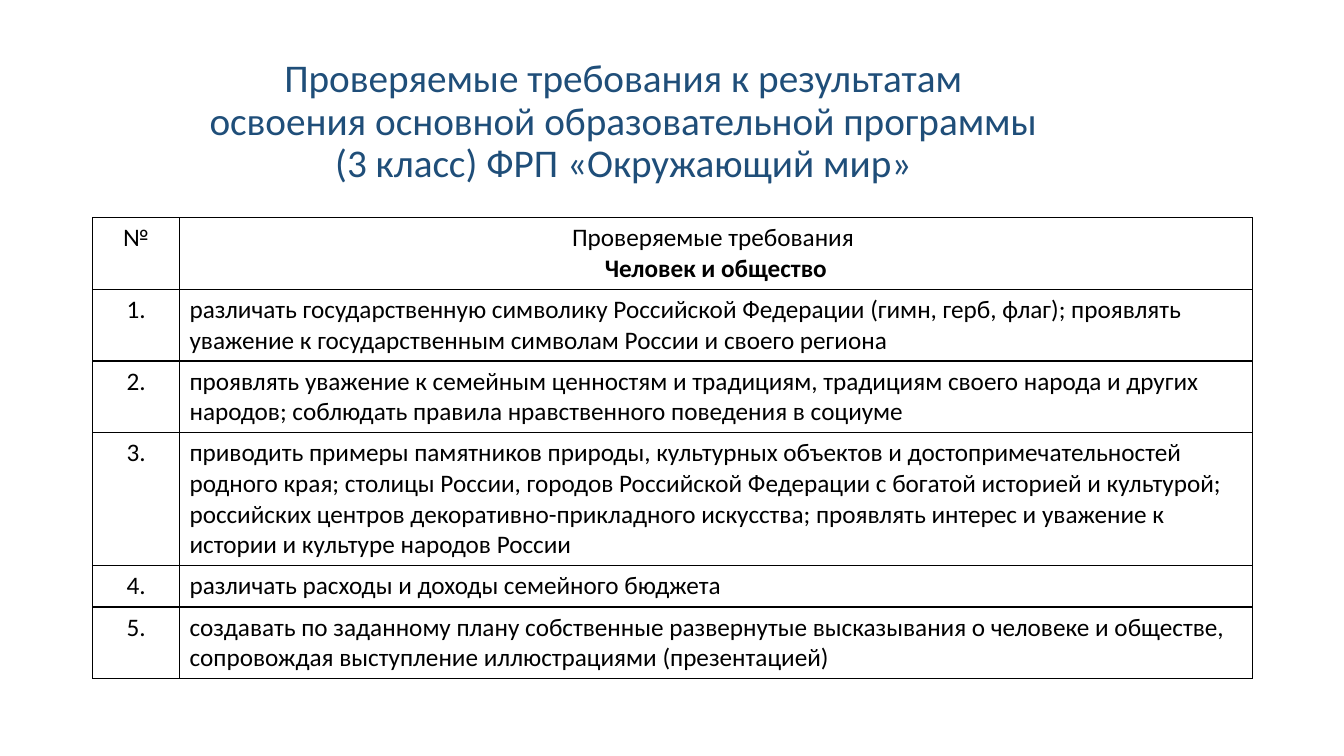
"""Build a slide with a title and a table of tested requirements."""
from typing import Any, NamedTuple

from lxml import etree
from pptx import Presentation
from pptx.dml.color import RGBColor
from pptx.enum.text import MSO_ANCHOR, MSO_AUTO_SIZE, PP_ALIGN
from pptx.oxml.ns import qn
from pptx.util import Pt

BLUE = RGBColor(0x1F, 0x4E, 0x79)
BLACK = RGBColor(0, 0, 0)
LEFT, CENTER = PP_ALIGN.LEFT, PP_ALIGN.CENTER
MIDDLE = MSO_ANCHOR.MIDDLE
FIXED = MSO_AUTO_SIZE.NONE
SCALE = 9144
SIDES = ("a:lnL", "a:lnR", "a:lnT", "a:lnB")
HEAD = {"name": "Calibri", "size": Pt(28), "bold": False}
BODY = {"name": "Calibri", "size": Pt(18), "bold": False}
TITLE = (
    "Проверяемые требования к результатам \v"
    "освоения основной образовательной программы \v"
    "(3 класс) ФРП «Окружающий мир» "
)


class Row(NamedTuple):
    """One table row with its height in px."""
    label: str
    text: str
    high: int
    align: Any = LEFT


ROWS = [
    Row("№", "Проверяемые требования \nЧеловек и общество", 71, CENTER),
    Row("1.", "различать государственную символику Российской Федерации "
        "(гимн, герб, флаг); проявлять уважение к государственным символам "
        "России и своего региона", 71),
    Row("2.", "проявлять уважение к семейным ценностям и традициям, традициям "
        "своего народа и других народов; соблюдать правила нравственного "
        "поведения в социуме", 71),
    Row("3.", "приводить примеры памятников природы, культурных объектов и "
        "достопримечательностей родного края; столицы России, городов "
        "Российской Федерации с богатой историей и культурой; российских "
        "центров декоративно-прикладного искусства; проявлять интерес и "
        "уважение к истории и культуре народов России", 132),
    Row("4.", "различать расходы и доходы семейного бюджета", 41),
    Row("5.", "создавать по заданному плану собственные развернутые "
        "высказывания о человеке и обществе, сопровождая выступление "
        "иллюстрациями (презентацией)", 71),
]
COLS = (86, 1064)


def px(size: int) -> int:
    """Turn px into EMU."""
    return size * SCALE


def style(frame: Any, form: dict[str, Any], color: RGBColor, align: Any) -> None:
    """Format all text in a frame."""
    for para in frame.paragraphs:
        para.alignment = align
        for run in para.runs:
            for key, value in form.items():
                setattr(run.font, key, value)
            run.font.color.rgb = color


def border(cell: Any) -> None:
    """Draw a thin black line on each side of a cell."""
    props = cell._tc.get_or_add_tcPr()
    for place, side in enumerate(SIDES):
        line = etree.Element(qn(side), w=str(Pt(1)))
        fill = etree.SubElement(line, qn("a:solidFill"))
        etree.SubElement(fill, qn("a:srgbClr"), val=str(BLACK))
        props.insert(place, line)


def add_title(slide: Any) -> None:
    """Place and format the title."""
    title = slide.shapes.title
    box = {"left": 133, "top": 49, "width": 979, "height": 145}
    for key, value in box.items():
        setattr(title, key, px(value))
    frame = title.text_frame
    frame.text = TITLE
    frame.auto_size = FIXED
    frame.vertical_anchor = MIDDLE
    frame.paragraphs[0].line_spacing = 0.9
    style(frame, HEAD, BLUE, CENTER)


def add_grid(slide: Any) -> None:
    """Add the table of requirements."""
    high = sum(row.high for row in ROWS)
    table = slide.shapes.add_table(
        len(ROWS), len(COLS), px(92), px(216), px(sum(COLS)), px(high)).table
    table.first_row = table.horz_banding = False
    for col, wide in zip(table.columns, COLS):
        col.width = px(wide)
    for place, row in enumerate(ROWS):
        table.rows[place].height = px(row.high)
        parts = ((row.label, CENTER), (row.text, row.align))
        for cell, (text, align) in zip(table.rows[place].cells, parts):
            cell.text = text
            cell.fill.background()
            border(cell)
            style(cell.text_frame, BODY, BLACK, align)
    theme = table.cell(0, 1).text_frame.paragraphs[1]
    theme.runs[0].font.bold = True


def main() -> None:
    """Build and save the deck."""
    deck = Presentation()
    deck.slide_width, deck.slide_height = px(1333), px(750)
    slide = deck.slides.add_slide(deck.slide_layouts.get_by_name("Title Only"))
    add_title(slide)
    add_grid(slide)
    deck.save("out.pptx")


if __name__ == "__main__":
    main()
